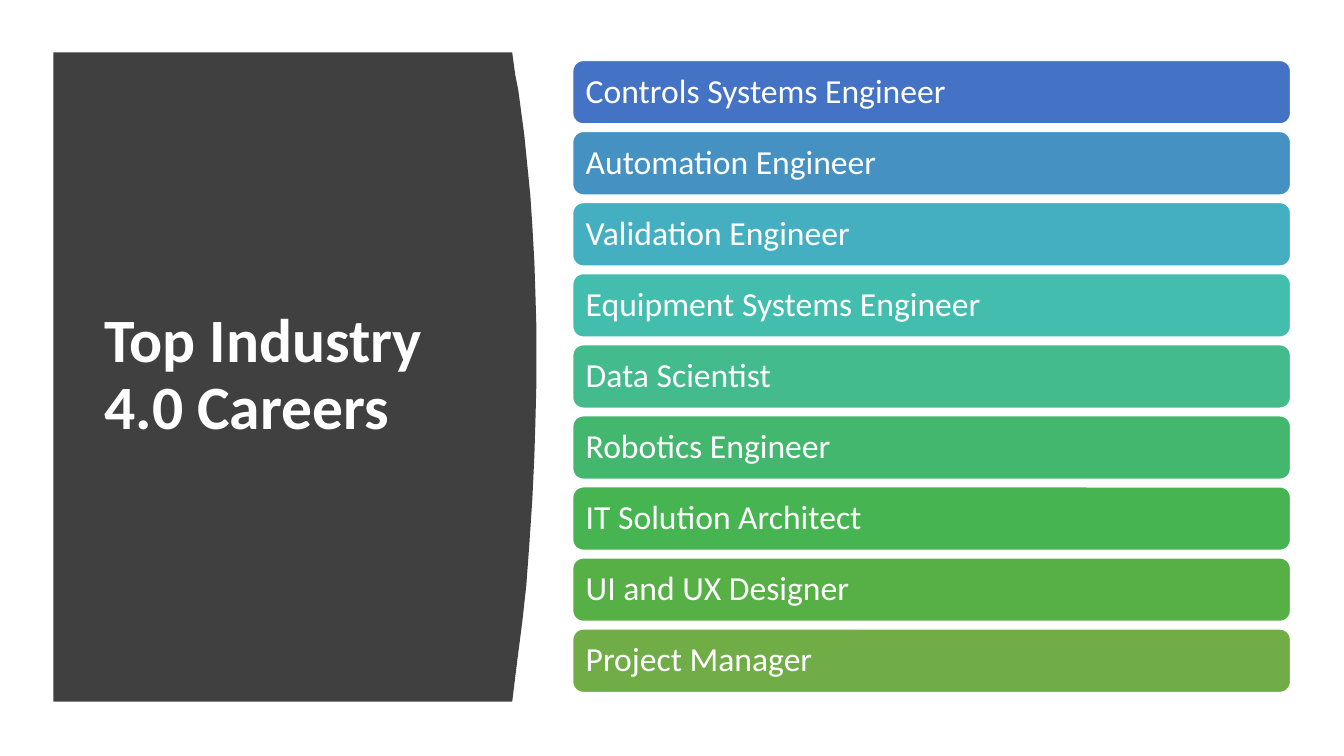
from pptx import Presentation
from pptx import util as u
from pptx.dml import color
from pptx.enum import shapes, text

COLORS = {"panel": "404040", "white": "FFFFFF"}
FONT = "Calibri"

CAREERS = [
    ("Controls Systems Engineer", "4472C4"),
    ("Automation Engineer", "4491C2"),
    ("Validation Engineer", "43AFC0"),
    ("Equipment Systems Engineer", "43BDAE"),
    ("Data Scientist", "43BB8D"),
    ("Robotics Engineer", "44B76E"),
    ("IT Solution Architect", "45B451"),
    ("UI and UX Designer", "56B046"),
    ("Project Manager", "70AD47"),
]

# Panel outline in inches: left edge, then the bulging right edge downwards
PANEL_LEFT, PANEL_TOP, PANEL_BOTTOM = 0.53, 0.52, 6.96
PANEL_CURVE = [
    (5.08, PANEL_TOP), (5.11, 0.74), (5.14, 0.89), (5.16, 1.04), (5.18, 1.19),
    (5.2, 1.34), (5.23, 1.64), (5.26, 1.94), (5.28, 2.24), (5.3, 2.6),
    (5.31, 2.9), (5.32, 3.25), (5.32, 3.8), (5.31, 4.2), (5.3, 4.52),
    (5.28, 4.95), (5.25, 5.4), (5.22, 5.81), (5.18, 6.17), (5.14, 6.48),
    (5.11, 6.72), (5.08, PANEL_BOTTOM),
]

# Stack of career bars
BAR_LEFT, BAR_WIDTH, BAR_HEIGHT = 5.68, 7.12, 0.63
FIRST_TOP, LAST_TOP = 0.6, 6.24


def rgb(value):
    return color.RGBColor.from_string(value)


def fill_shape(shape, value):
    shape.shadow.inherit = False
    shape.fill.solid()
    shape.fill.fore_color.rgb = rgb(value)


def write_text(shape, words, size, bold=False):
    frame = shape.text_frame
    frame.word_wrap = True
    frame.vertical_anchor = text.MSO_ANCHOR.MIDDLE
    frame.text = words
    para = frame.paragraphs[0]
    para.alignment = text.PP_ALIGN.LEFT
    para.line_spacing = 0.9
    font = para.runs[0].font
    font.name, font.size, font.bold = FONT, u.Pt(size), bold
    font.color.rgb = rgb(COLORS["white"])
    return frame


def add_panel(page):
    builder = page.shapes.build_freeform(
        u.Inches(PANEL_LEFT), u.Inches(PANEL_TOP))
    outline = PANEL_CURVE + [(PANEL_LEFT, PANEL_BOTTOM)]
    builder.add_line_segments(
        [(u.Inches(x), u.Inches(y)) for x, y in outline], close=True)
    panel = builder.convert_to_shape()
    fill_shape(panel, COLORS["panel"])
    panel.line.fill.background()


def add_title(page, words):
    box = page.shapes.add_textbox(
        u.Inches(0.94), u.Inches(1.11), u.Inches(3.74), u.Inches(5.24))
    write_text(box, words, 44, bold=True)


def add_bar(page, top, words, value):
    bar = page.shapes.add_shape(
        shapes.MSO_SHAPE.ROUNDED_RECTANGLE, u.Inches(BAR_LEFT),
        u.Inches(top), u.Inches(BAR_WIDTH), u.Inches(BAR_HEIGHT))
    fill_shape(bar, value)
    bar.line.color.rgb = rgb(COLORS["white"])
    bar.line.width = u.Pt(1)
    frame = write_text(bar, words, 24)
    frame.margin_left = frame.margin_right = u.Inches(0.1)
    frame.margin_top = frame.margin_bottom = u.Inches(0.1)


def main():
    deck = Presentation()
    deck.slide_width, deck.slide_height = u.Inches(13.33), u.Inches(7.5)
    page = deck.slides.add_slide(deck.slide_layouts[6])

    # Dark panel with the title
    add_panel(page)
    add_title(page, "Top Industry 4.0 Careers")

    # One bar per career, evenly spaced
    pitch = (LAST_TOP - FIRST_TOP) / (len(CAREERS) - 1)
    for index, (career, value) in enumerate(CAREERS):
        add_bar(page, FIRST_TOP + index * pitch, career, value)

    deck.save("out.pptx")


if __name__ == "__main__":
    main()
